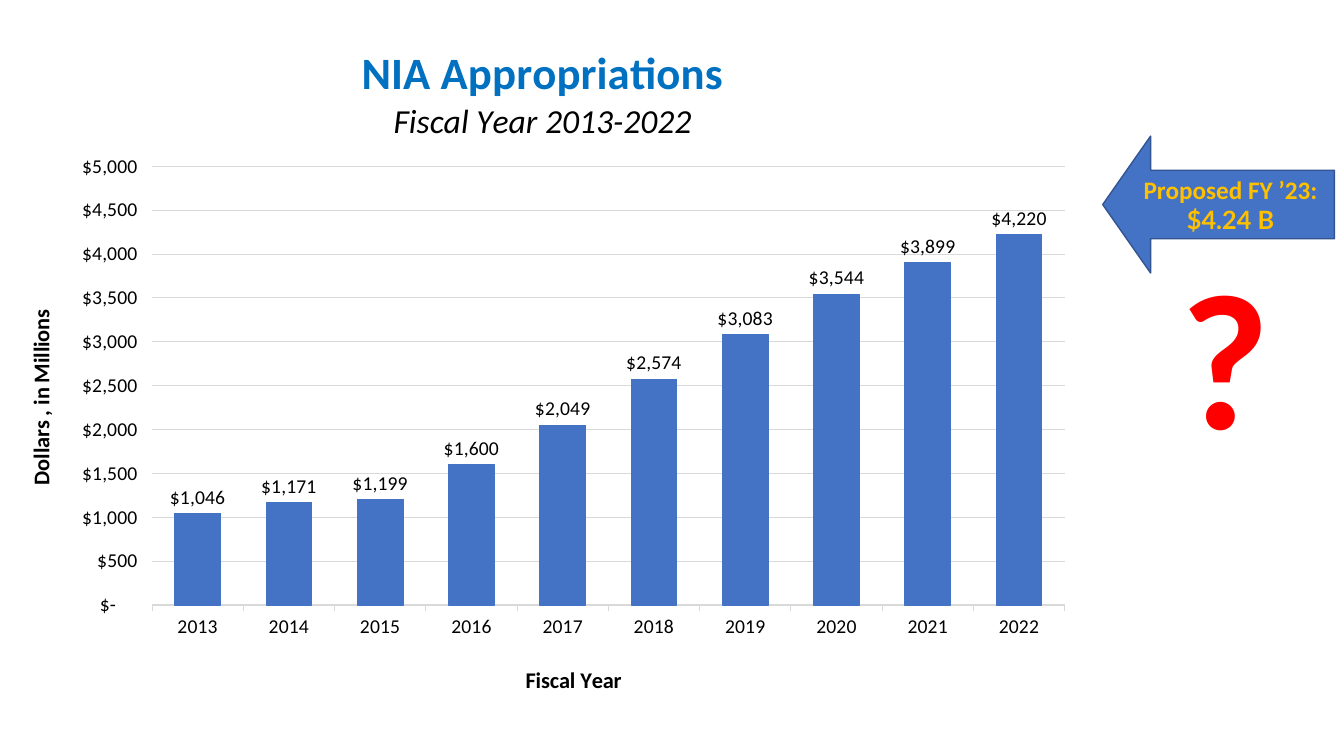
from lxml import etree
from pptx import Presentation
from pptx.chart.data import CategoryChartData
from pptx.dml.color import RGBColor
from pptx.enum.chart import XL_CHART_TYPE, XL_LABEL_POSITION, XL_TICK_MARK
from pptx.enum.shapes import MSO_SHAPE
from pptx.enum.text import MSO_ANCHOR, MSO_AUTO_SIZE, PP_ALIGN
from pptx.oxml.ns import qn
from pptx.util import Cm, Pt

COLORS = {
    "bar": "4472C4",
    "arrow_edge": "325491",
    "gold": "FFC000",
    "red": "FF0000",
    "title": "0070C0",
    "text": "000000",
    "grid": "D9D9D9",
}

APPROPRIATIONS = {
    "2013": 1046, "2014": 1171, "2015": 1199, "2016": 1600, "2017": 2049,
    "2018": 2574, "2019": 3083, "2020": 3544, "2021": 3899, "2022": 4220,
}
DOLLARS = '_("$"* #,##0_);_("$"* \\(#,##0\\);_("$"* "-"??_);_(@_)'


def rgb(name):
    return RGBColor.from_string(COLORS[name])


def style_font(font, size, color, bold=False, italic=False, face="Calibri"):
    font.name = face
    font.size = Pt(size)
    font.bold = bold
    font.italic = italic
    font.color.rgb = rgb(color)


def add_run(paragraph, text, size, color, **style):
    run = paragraph.add_run()
    run.text = text
    style_font(run.font, size, color, **style)


def set_line(line, color, width=0.75):
    line.color.rgb = rgb(color)
    line.width = Pt(width)


def place(part, x, y, w=None, h=None):
    """Fix a chart part at fractions of the chart's size."""
    layout = part.find(qn("c:layout"))
    if layout is None:
        layout = etree.Element(qn("c:layout"))
        rich_text = part.find(qn("c:tx"))
        if rich_text is None:
            part.insert(0, layout)
        else:
            rich_text.addnext(layout)
    manual = etree.SubElement(layout, qn("c:manualLayout"))
    settings = {"xMode": "edge", "yMode": "edge", "x": x, "y": y}
    if w is not None:
        settings = {"layoutTarget": "inner", **settings, "w": w, "h": h}
    for tag, value in settings.items():
        etree.SubElement(manual, qn(f"c:{tag}")).set("val", str(value))


def add_axis_title(axis, text, x, y, rotation=0):
    frame = axis.axis_title.text_frame
    add_run(frame.paragraphs[0], text, 16, "text", bold=True)
    title = axis.axis_title.element
    title.find(".//" + qn("a:bodyPr")).set("rot", str(rotation * 60000))
    place(title, x, y)


def style_axes(chart):
    years, dollars = chart.category_axis, chart.value_axis
    for axis in (years, dollars):
        style_font(axis.tick_labels.font, 14, "text")
        axis.major_tick_mark = XL_TICK_MARK.OUTSIDE
        axis.minor_tick_mark = XL_TICK_MARK.NONE
    set_line(years.format.line, "grid")
    dollars.format.line.fill.background()
    dollars.minimum_scale = 0
    dollars.maximum_scale = 5000
    dollars.major_unit = 500
    dollars.has_major_gridlines = True
    set_line(dollars.major_gridlines.format.line, "grid")
    dollars.tick_labels.number_format = DOLLARS
    dollars.tick_labels.number_format_is_linked = False
    add_axis_title(years, "Fiscal Year", 0.48, 0.93)
    add_axis_title(dollars, "Dollars , in Millions", 0.02, 0.42, rotation=-90)


def style_bars(plot):
    plot.gap_width = 100
    plot.overlap = -27
    plot.vary_by_categories = False
    bars = plot.series[0]
    bars.format.fill.solid()
    bars.format.fill.fore_color.rgb = rgb("bar")
    set_line(bars.format.line, "bar")
    labels = bars.data_labels
    labels.show_value = True
    labels.position = XL_LABEL_POSITION.OUTSIDE_END
    labels.number_format = '"$"#,##0'
    labels.number_format_is_linked = False
    style_font(labels.font, 14, "text")


def add_appropriations_chart(slide, left, top, width, height):
    data = CategoryChartData(number_format=DOLLARS)
    data.categories = list(APPROPRIATIONS)
    data.add_series("Series 1", list(APPROPRIATIONS.values()))
    chart = slide.shapes.add_chart(
        XL_CHART_TYPE.COLUMN_CLUSTERED, left, top, width, height, data
    ).chart
    style_font(chart.font, 14, "text")
    chart.has_legend = False

    # Two-line heading
    heading = chart.chart_title.text_frame
    add_run(heading.paragraphs[0], "NIA Appropriations", 32, "title", bold=True)
    add_run(heading.add_paragraph(), "Fiscal Year 2013-2022", 24, "text",
            italic=True)
    place(chart.chart_title.element, 0.33, 0.04)

    style_axes(chart)
    style_bars(chart.plots[0])
    plot_area = chart.element.find(".//" + qn("c:plotArea"))
    place(plot_area, 0.14, 0.22, 0.84, 0.63)


def add_proposal_arrow(slide, left, top, width, height):
    arrow = slide.shapes.add_shape(MSO_SHAPE.LEFT_ARROW, left, top, width, height)
    arrow.adjustments[0] = 0.5
    arrow.adjustments[1] = 0.35
    arrow.shadow.inherit = False
    arrow.fill.solid()
    arrow.fill.fore_color.rgb = rgb("bar")
    set_line(arrow.line, "arrow_edge", 1)
    frame = arrow.text_frame
    frame.word_wrap = True
    frame.vertical_anchor = MSO_ANCHOR.MIDDLE
    year, amount = frame.paragraphs[0], frame.add_paragraph()
    add_run(year, "Proposed FY ’23:", 18, "gold", bold=True)
    add_run(amount, "$4.24 B", 18, "gold", bold=True, face="Lato")
    for line in (year, amount):
        line.alignment = PP_ALIGN.CENTER


def add_question_mark(slide, left, top, width, height):
    frame = slide.shapes.add_textbox(left, top, width, height).text_frame
    frame.word_wrap = True
    frame.auto_size = MSO_AUTO_SIZE.SHAPE_TO_FIT_TEXT
    add_run(frame.paragraphs[0], "?", 138, "red", bold=True)


def main():
    deck = Presentation()
    deck.slide_width, deck.slide_height = Cm(33.87), Cm(19.05)
    slide = deck.slides.add_slide(deck.slide_layouts[6])

    # Proposed budget, right of the chart
    add_proposal_arrow(slide, Cm(27.79), Cm(3.43), Cm(5.84), Cm(3.45))
    add_question_mark(slide, Cm(29.49), Cm(5.82), Cm(3.05), Cm(6.15))

    # Appropriations by year
    add_appropriations_chart(slide, Cm(0), Cm(0.33), Cm(27.38), Cm(17.55))
    deck.save("out.pptx")


if __name__ == "__main__":
    main()
